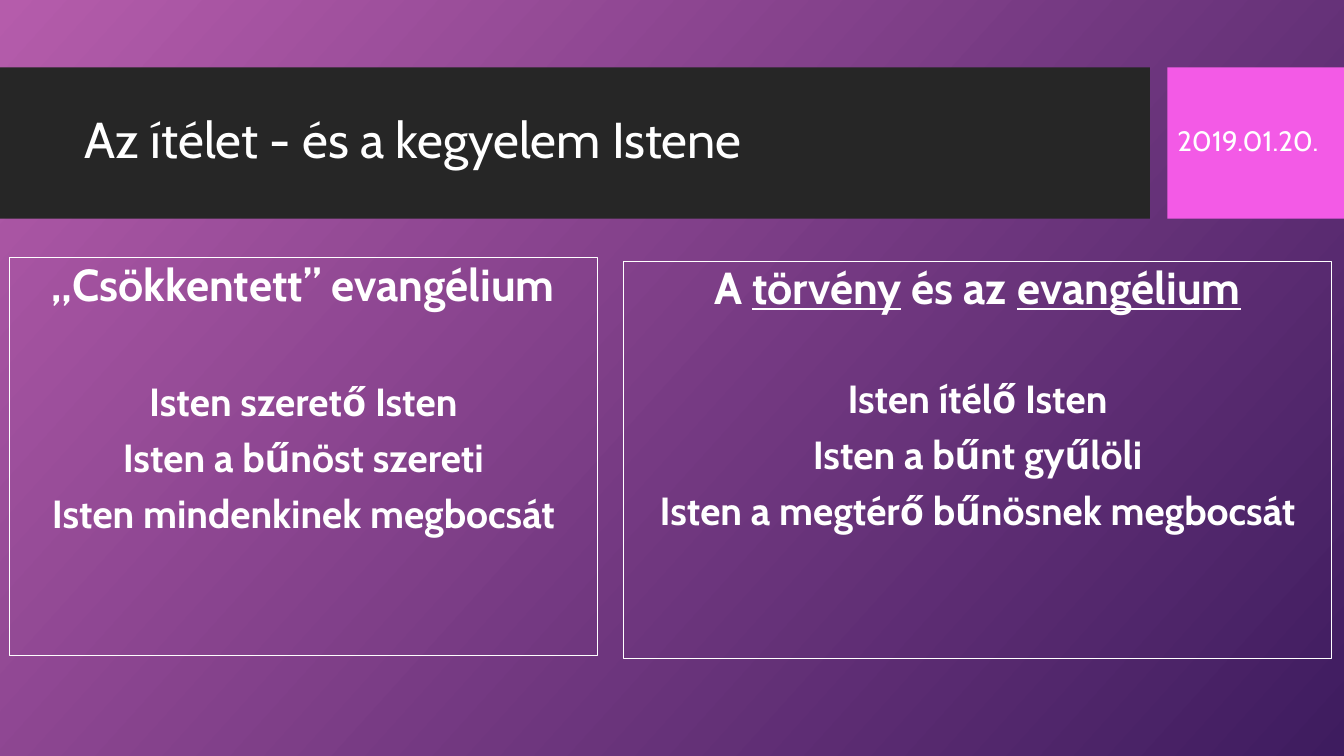
from lxml import etree
from pptx import Presentation
from pptx import util as u
from pptx.dml import color
from pptx.enum import shapes, text
from pptx.oxml import ns

FONT = "Cabin"
WHITE = "FFFFFF"


def paint(target, hex_color):
    """Give a fill or a font a solid colour."""
    if hasattr(target, "solid"):
        target.solid()
        target.fore_color.rgb = color.RGBColor.from_string(hex_color)
    else:
        target.color.rgb = color.RGBColor.from_string(hex_color)


def place(part, left, top, width, height):
    part.left, part.top = u.Cm(left), u.Cm(top)
    part.width, part.height = u.Cm(width), u.Cm(height)


def style(paragraph, size, bold=False, align=text.PP_ALIGN.LEFT):
    paragraph.alignment = align
    paragraph.line_spacing = 0.9
    paragraph.font.name = FONT
    paragraph.font.size = u.Pt(size)
    paragraph.font.bold = bold
    paint(paragraph.font, WHITE)


def add_background(slide):
    fill = slide.background.fill
    fill.gradient()
    fill.gradient_angle = 318
    for stop, shade in zip(fill.gradient_stops, ("B55CAB", "3E1C5F")):
        stop.color.rgb = color.RGBColor.from_string(shade)


def add_band(slide, left, top, width, height, shade):
    band = slide.shapes.add_shape(
        shapes.MSO_SHAPE.RECTANGLE,
        u.Cm(left), u.Cm(top), u.Cm(width), u.Cm(height))
    band.shadow.inherit = False
    paint(band.fill, shade)
    band.line.fill.background()


def write_line(part, words, size):
    frame = part.text_frame
    frame.word_wrap = True
    frame.auto_size = text.MSO_AUTO_SIZE.NONE
    frame.vertical_anchor = text.MSO_ANCHOR.MIDDLE
    frame.text = words
    style(frame.paragraphs[0], size)


def add_header(slide, left, top, width, height, heading, date):
    # Dark band for the title, pink box for the date
    title_width, date_width = 28.98, 4.45
    date_left = left + width - date_width
    add_band(slide, left, top, title_width, height, "262626")
    add_band(slide, date_left, top, date_width, height, "F35AE6")

    # Title, brought in front of its band
    title = slide.shapes.title
    place(title, left + 1.88, top + 0.38, title_width - 2.28, height - 0.81)
    write_line(title, heading, 36)
    slide.shapes.element.append(title.element)

    # Date
    date_box = slide.shapes.add_textbox(0, 0, 0, 0)
    place(date_box, date_left, top + 0.38, date_width, height - 0.81)
    write_line(date_box, date, 20)


def fill_column(column, left, top, width, height, heading, statements, gap):
    """Heading is a list of (words, underlined); gap is the space below it."""
    place(column, left, top, width, height)
    paint(column.line.fill, WHITE)
    column.line.width = u.Pt(0.75)
    frame = column.text_frame
    frame.word_wrap = True
    frame.auto_size = text.MSO_AUTO_SIZE.NONE
    frame.vertical_anchor = text.MSO_ANCHOR.TOP

    lines = [heading] + [[(words, False)] for words in statements]
    for row, parts in enumerate(lines):
        paragraph = frame.add_paragraph() if row else frame.paragraphs[0]
        for words, underlined in parts:
            run = paragraph.add_run()
            run.text = words
            if underlined:
                run.font.underline = True
        # No bullet, no hanging indent
        properties = paragraph._p.get_or_add_pPr()
        properties.set("marL", "0")
        properties.set("indent", "0")
        etree.SubElement(properties, ns.qn("a:buNone"))
        paragraph.space_before = u.Pt((0, gap)[row] if row < 2 else 10)
        style(paragraph, 28 if row else 32, True, text.PP_ALIGN.CENTER)


def main():
    deck = Presentation()
    deck.slide_width, deck.slide_height = u.Cm(33.87), u.Cm(19.05)
    slide = deck.slides.add_slide(deck.slide_layouts.get_by_name("Two Content"))
    _, reduced_gospel, law_and_gospel = slide.placeholders

    add_background(slide)
    add_header(slide, 0, 1.7, 33.87, 3.81,
               "Az ítélet - és a kegyelem Istene", "2019.01.20.")
    fill_column(reduced_gospel, 0.23, 6.5, 14.83, 10.01,
                [("„Csökkentett” evangélium", False)],
                ["Isten szerető Isten", "Isten a bűnöst szereti",
                 "Isten mindenkinek megbocsát"], 50.6)
    fill_column(law_and_gospel, 15.72, 6.58, 17.83, 10.01,
                [("A ", False), ("törvény", True),
                 (" és az ", False), ("evangélium", True)],
                ["Isten ítélő Isten", "Isten a bűnt gyűlöli",
                 "Isten a megtérő bűnösnek megbocsát"], 46.2)
    deck.save("out.pptx")


if __name__ == "__main__":
    main()
